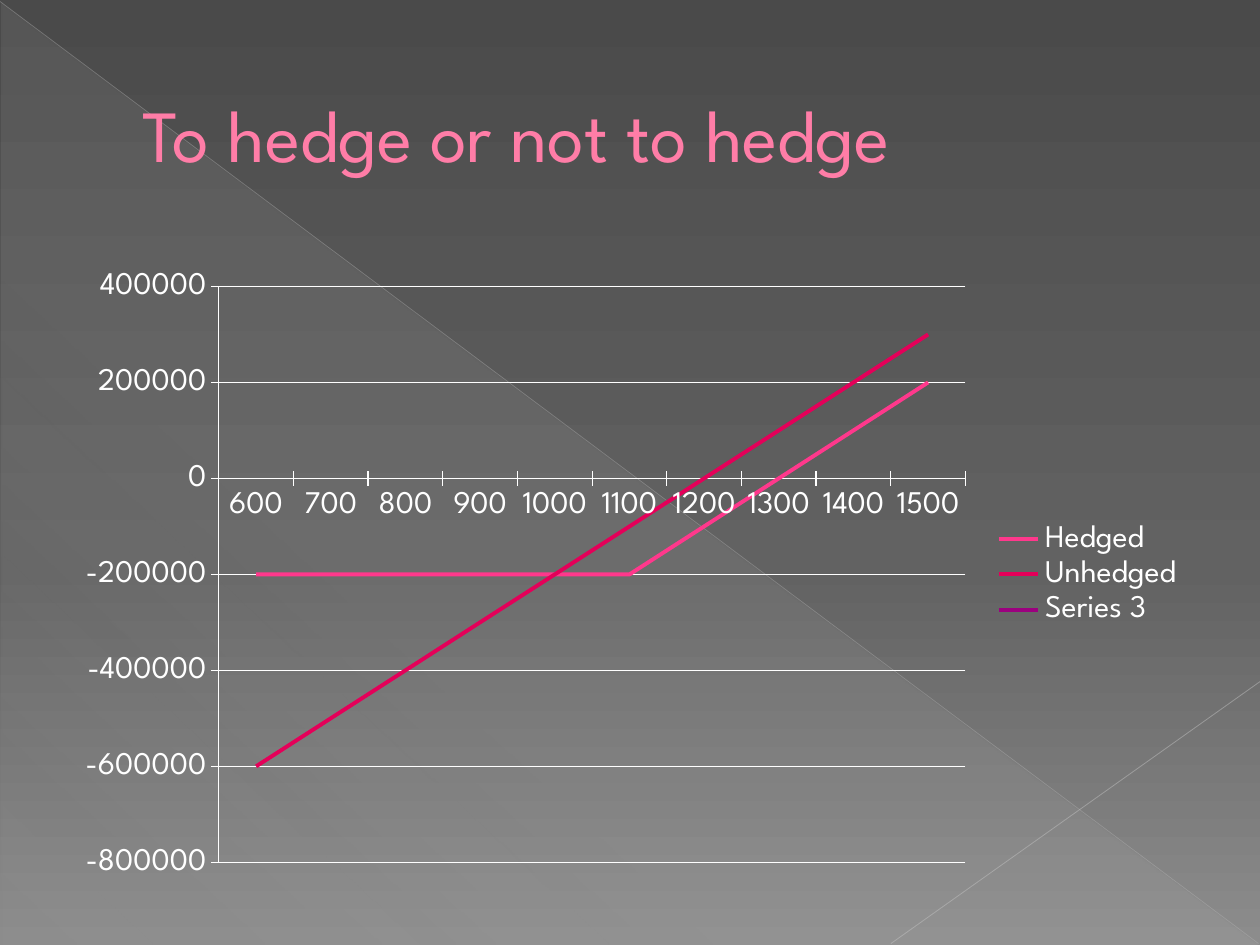
from lxml import etree
from pptx import Presentation
from pptx.chart.data import CategoryChartData
from pptx.dml.color import RGBColor
from pptx.enum.chart import XL_CHART_TYPE, XL_LEGEND_POSITION, XL_MARKER_STYLE, XL_TICK_MARK
from pptx.enum.shapes import MSO_CONNECTOR, MSO_SHAPE
from pptx.enum.text import MSO_ANCHOR
from pptx.oxml.ns import qn
from pptx.util import Cm, Pt

LINE = XL_CHART_TYPE.LINE
RIGHT = XL_LEGEND_POSITION.RIGHT
BARE = XL_MARKER_STYLE.NONE
CROSS = XL_TICK_MARK.CROSS
STRAIGHT = MSO_CONNECTOR.STRAIGHT
WEDGE = MSO_SHAPE.RIGHT_TRIANGLE
MIDDLE = MSO_ANCHOR.MIDDLE

FONT = "League Spartan"
HUES = {
    "top": "4A4A4A", "mid": "626262", "base": "8C8C8C",
    "veil": "D2D2D2", "long": "BFBFBF", "short": "C6C6C6",
    "title": "FF7DA7", "edge": "B12761", "text": "FFFFFF",
    "Hedged": "FF388C", "Unhedged": "E40059", "Series 3": "9C007F",
}
PRICES = range(600, 1600, 100)
GAINS = {
    "Hedged": [max(-200000, (p - 1300) * 1000) for p in PRICES],
    "Unhedged": [(p - 1200) * 1000 for p in PRICES],
    "Series 3": [None] * len(PRICES),
}


def hue(name):
    """Return the named colour."""
    return RGBColor.from_string(HUES[name])


def fade(node, alpha):
    """Set the opacity of a colour node in percent."""
    etree.SubElement(node, qn("a:alpha"), val=str(alpha * 1000))


def blend(fill, root, stops, angle):
    """Give a fill a linear gradient of (position, colour, opacity) stops."""
    fill.gradient()
    grad = root.find(".//" + qn("a:gradFill"))
    for part in list(grad):
        grad.remove(part)
    group = etree.SubElement(grad, qn("a:gsLst"))
    for place, name, alpha in stops:
        stop = etree.SubElement(group, qn("a:gs"), pos=str(place * 1000))
        tint = etree.SubElement(stop, qn("a:srgbClr"), val=HUES[name])
        if alpha < 100:
            fade(tint, alpha)
    etree.SubElement(grad, qn("a:lin"), ang=str(angle * 60000), scaled="0")


def stroke(line, name, width):
    """Colour a line and set its width in points."""
    line.color.rgb = hue(name)
    line.width = Pt(width)


def ray(slide, start, end, name, width, alpha):
    """Draw a faint straight line between two points in centimetres."""
    ends = [Cm(n) for n in (*start, *end)]
    link = slide.shapes.add_connector(STRAIGHT, *ends)
    stroke(link.line, name, width)
    props = link._element.spPr
    fade(props.find(".//" + qn("a:srgbClr")), alpha)
    etree.SubElement(props, qn("a:effectLst"))


def scene(slide, wide, high):
    """Paint the backdrop with its veil and two crossing lines."""
    shades = [(0, "top", 100), (60, "mid", 100), (100, "base", 100)]
    blend(slide.background.fill, slide.element, shades, 90)
    veil = slide.shapes.add_shape(
        WEDGE, Cm(0.03), Cm(0.05), Cm(wide - 0.05), Cm(high - 0.05))
    veil.shadow.inherit = False
    veil.line.fill.background()
    tints = [(0, "veil", 10), (70, "veil", 8), (100, "veil", 1)]
    blend(veil.fill, veil._element, tints, 133)
    low = high - 0.03
    ray(slide, (0, 0.03), (wide - 0.03, low), "long", 0.39, 35)
    ray(slide, (wide, 13.74), (17.96, low), "short", 0.47, 45)


def head(slide, left, top, wide, high):
    """Write the indented title in its box."""
    box = slide.shapes.add_textbox(Cm(left), Cm(top), Cm(wide), Cm(high))
    frame = box.text_frame
    frame.word_wrap = True
    frame.vertical_anchor = MIDDLE
    para = frame.paragraphs[0]
    para._p.get_or_add_pPr().set("marL", str(Cm(1.35)))
    run = para.add_run()
    run.text = "To hedge or not to hedge"
    run.font.name = FONT
    run.font.size = Pt(42)
    run.font.color.rgb = hue("title")
    edge = etree.Element(qn("a:ln"), w=str(Pt(0.5)))
    fill = etree.SubElement(edge, qn("a:solidFill"))
    etree.SubElement(fill, qn("a:srgbClr"), val=HUES["edge"])
    run._r.get_or_add_rPr().insert(0, edge)


def plot(slide, left, top, wide, high):
    """Chart gains against price with a legend on the right."""
    data = CategoryChartData()
    data.categories = [str(p) for p in PRICES]
    for name, gains in GAINS.items():
        data.add_series(name, gains)
    chart = slide.shapes.add_chart(
        LINE, Cm(left), Cm(top), Cm(wide), Cm(high), data).chart
    chart.has_title = False
    chart.font.name = FONT
    chart.font.size = Pt(18)
    chart.font.color.rgb = hue("text")
    chart.has_legend = True
    chart.legend.position = RIGHT
    chart.legend.include_in_layout = False
    for axis in (chart.category_axis, chart.value_axis):
        axis.major_tick_mark = CROSS
        stroke(axis.format.line, "text", 0.75)
    grid = chart.value_axis
    grid.minimum_scale, grid.maximum_scale = -800000, 400000
    grid.major_unit = 200000
    stroke(grid.major_gridlines.format.line, "text", 0.75)
    chart.plots[0].vary_by_categories = False
    for row in chart.plots[0].series:
        row.smooth = False
        row.marker.style = BARE
        stroke(row.format.line, row.name, 2.25)


def main():
    """Build and save the slide."""
    deck = Presentation()
    wide, high = 25.4, 19.05
    deck.slide_width, deck.slide_height = Cm(wide), Cm(high)
    slide = deck.slides.add_slide(deck.slide_layouts[6])
    edge = 1.27
    scene(slide, wide, high)
    head(slide, edge, 0.74, wide - 2 * edge, 3.89)
    plot(slide, edge, 5.23, wide - 2 * edge, 12.7)
    deck.save("out.pptx")


if __name__ == "__main__":
    main()
